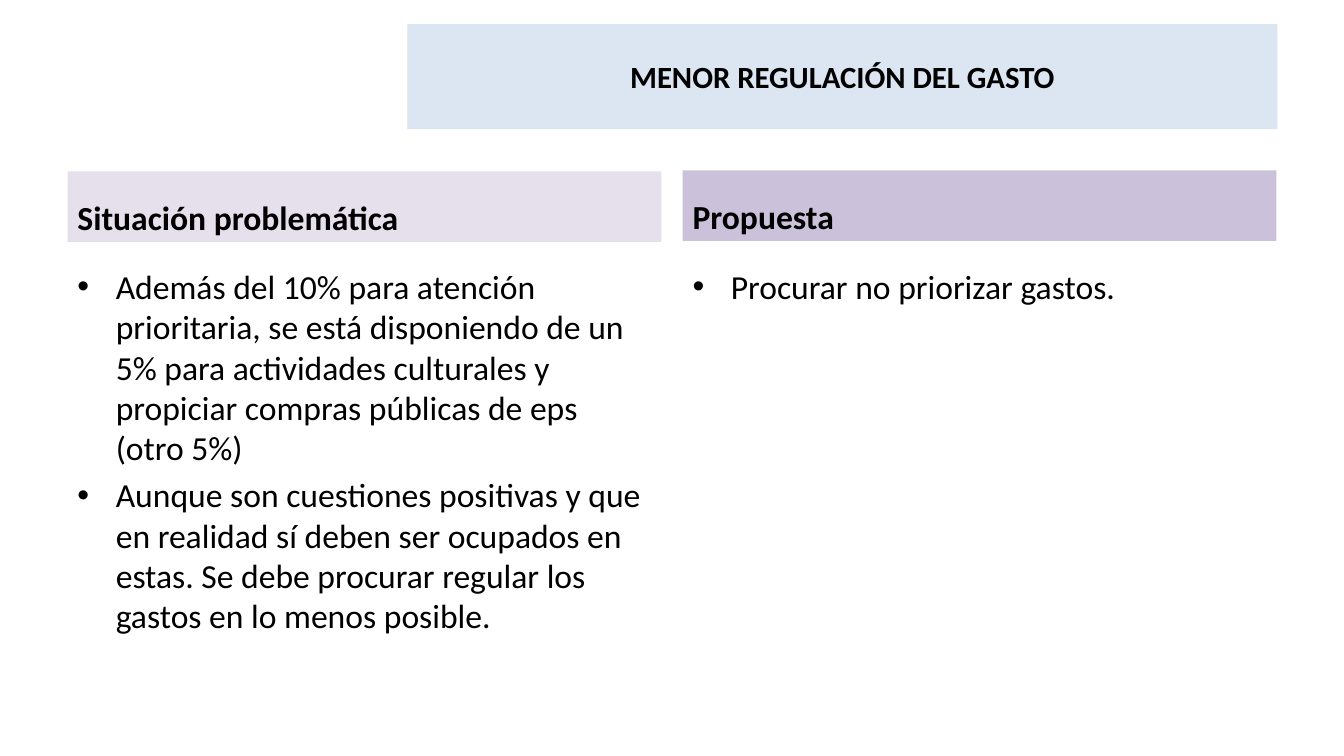
from lxml import etree
from pptx import Presentation
from pptx.dml.color import RGBColor
from pptx.enum import text
from pptx.oxml import ns
from pptx.util import Inches, Pt

TITLE = "MENOR REGULACIÓN DEL GASTO"
COLORS = {"title": "DCE6F2", "problem": "E6E0EC", "proposal": "CCC1DA", "text": "000000"}
COLUMNS = [
    {
        "heading": "Situación problemática", "fill": "problem", "left": 0.67, "top": 1.7,
        "points": [
            "Además del 10% para atención prioritaria, se está disponiendo de un 5% "
            "para actividades culturales y propiciar compras públicas de eps (otro 5%)",
            "Aunque son cuestiones positivas y que en realidad sí deben ser ocupados en "
            "estas. Se debe procurar regular los gastos en lo menos posible.",
        ],
    },
    {
        "heading": "Propuesta", "fill": "proposal", "left": 6.77, "top": 1.69,
        "points": ["Procurar no priorizar gastos."],
    },
]
COLUMN_WIDTH = 5.89
HEADING_HEIGHT = 0.7
POINTS_TOP, POINTS_HEIGHT = 2.59, 4.11
BULLET_INDENT = 0.38


def add_bullet(para):
    properties = para._p.get_or_add_pPr()
    properties.set("marL", str(Inches(BULLET_INDENT)))
    properties.set("indent", str(-Inches(BULLET_INDENT)))
    etree.SubElement(properties, ns.qn("a:buFont")).set("typeface", "Arial")
    etree.SubElement(properties, ns.qn("a:buChar")).set("char", "•")


def write(box, lines, size=24, bold=False, bullets=False, align=text.PP_ALIGN.LEFT,
          anchor=text.MSO_ANCHOR.TOP):
    frame = box.text_frame
    frame.word_wrap = True
    frame.auto_size = text.MSO_AUTO_SIZE.NONE
    frame.vertical_anchor = anchor
    for index, line in enumerate(lines):
        para = frame.add_paragraph() if index else frame.paragraphs[0]
        para.text = line
        para.alignment = align
        if index:
            para.space_before = Pt(size * 0.2)
        if bullets:
            add_bullet(para)
        para.font.name = "Calibri"
        para.font.size = Pt(size)
        para.font.bold = bold
        para.font.color.rgb = RGBColor.from_string(COLORS["text"])


def paint(box, color):
    box.fill.solid()
    box.fill.fore_color.rgb = RGBColor.from_string(COLORS[color])


deck = Presentation()
deck.slide_width, deck.slide_height = Inches(13.33), Inches(7.5)
page = deck.slides.add_slide(deck.slide_layouts[5])

title = page.shapes.title
title.left, title.top = Inches(4.04), Inches(0.24)
title.width, title.height = Inches(8.63), Inches(1.04)
paint(title, "title")
write(title, [TITLE], size=22, bold=True, align=text.PP_ALIGN.CENTER,
      anchor=text.MSO_ANCHOR.MIDDLE)

for column in COLUMNS:
    left, width = Inches(column["left"]), Inches(COLUMN_WIDTH)
    points = page.shapes.add_textbox(left, Inches(POINTS_TOP), width, Inches(POINTS_HEIGHT))
    write(points, column["points"], bullets=True)
    heading = page.shapes.add_textbox(left, Inches(column["top"]), width, Inches(HEADING_HEIGHT))
    paint(heading, column["fill"])
    write(heading, [column["heading"]], bold=True, anchor=text.MSO_ANCHOR.BOTTOM)

deck.save("out.pptx")
